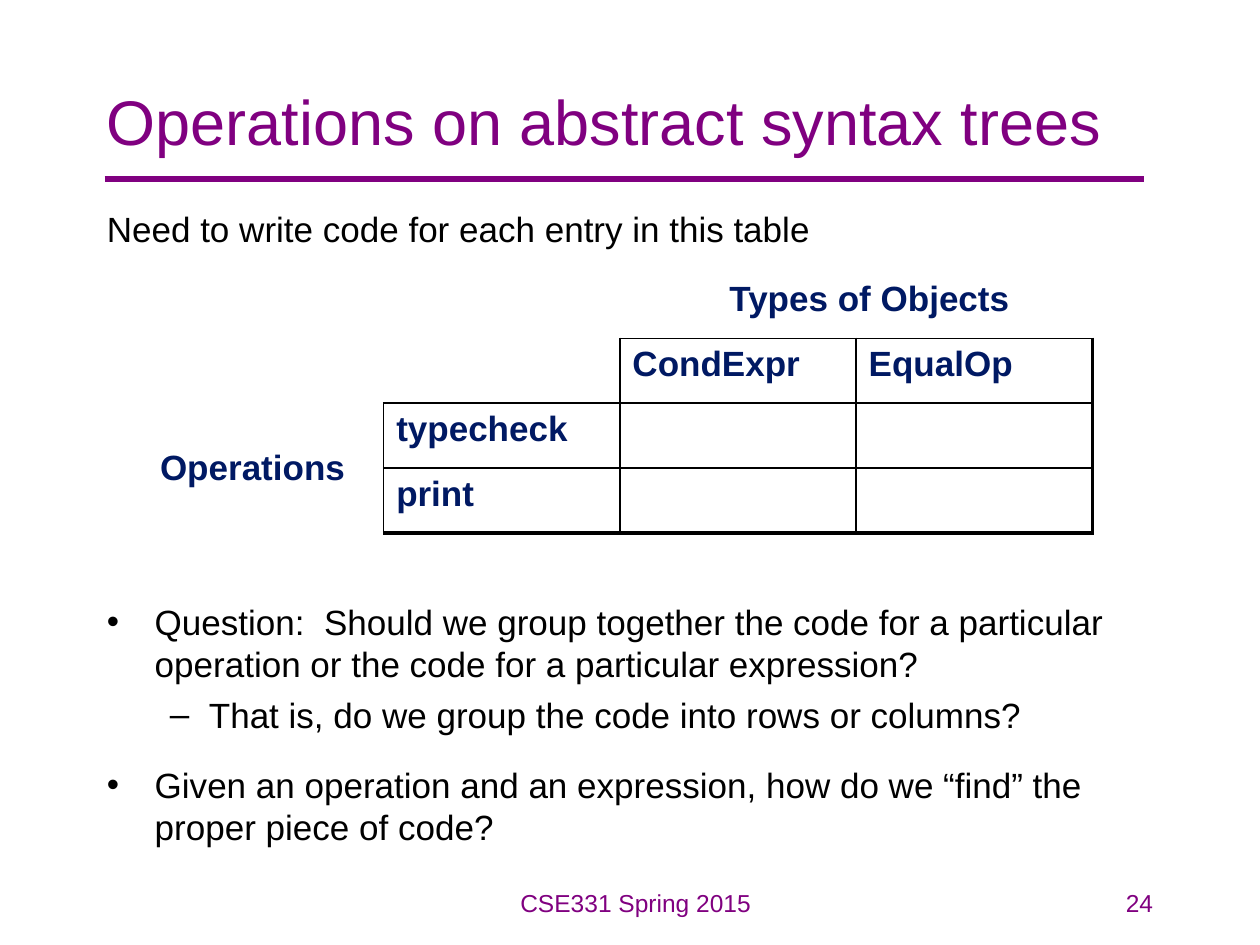
import pptx
import pptx.dml.color
import pptx.enum.shapes
import pptx.enum.text
import pptx.oxml
import pptx.oxml.ns
import pptx.util
from pptx.util import Inches

FONT = "Arial"
PURPLE, NAVY, BLACK = "800080", "001963", "000000"
ALIGN = pptx.enum.text.PP_ALIGN
ANCHOR = pptx.enum.text.MSO_ANCHOR


def rgb(color):
    return pptx.dml.color.RGBColor.from_string(color)


def element(xml):
    return pptx.oxml.parse_xml(xml.replace(">", " %s>" % pptx.oxml.ns.nsdecls("a"), 1))


def format_paragraph(p, size, color, bold=False, align=ALIGN.LEFT):
    p.alignment = align
    for r in p.runs:
        r.font.name = FONT
        r.font.size = pptx.util.Pt(size)
        r.font.bold = bold
        r.font.color.rgb = rgb(color)


def add_text(s, box, text, size, color, align=ALIGN.LEFT, anchor=ANCHOR.TOP):
    tf = s.shapes.add_textbox(*map(Inches, box)).text_frame
    tf.word_wrap = True
    tf.vertical_anchor = anchor
    tf.text = text
    for p in tf.paragraphs:
        format_paragraph(p, size, color, align=align)
    return tf


def add_header(s, box, title):
    left, top, width, height = box
    # Rule below the title
    y = Inches(top + height - 0.16)
    rule = s.shapes.add_connector(pptx.enum.shapes.MSO_CONNECTOR.STRAIGHT,
                                  Inches(left + 0.08), y, Inches(left + width - 0.17), y)
    rule.line.color.rgb = rgb(PURPLE)
    rule.line.width = pptx.util.Pt(3)
    rule._element.spPr.append(element("<a:effectLst></a:effectLst>"))
    add_text(s, box, title, 36, PURPLE, anchor=ANCHOR.MIDDLE)


def add_bullets(s, box, items):
    """Each item is (level, space before in points, text)."""
    tf = add_text(s, box, "\n".join(text for _, _, text in items), 20, BLACK)
    styles = [("•", 0.38, 0.38), ("–", 0.81, 0.31)]
    for p, (level, before, _) in zip(tf.paragraphs, items):
        mark, indent, hang = styles[level]
        p.level = level
        p.space_before = pptx.util.Pt(before)
        pPr = p._p.get_or_add_pPr()
        pPr.set("marL", str(Inches(indent)))
        pPr.set("indent", str(-Inches(hang)))
        pPr.append(element('<a:buFont typeface="%s"></a:buFont>' % FONT))
        pPr.append(element('<a:buChar char="%s"></a:buChar>' % mark))


def set_borders(cell, widths):
    """Widths in points for left, right, top, bottom; 0 means no line."""
    tcPr = cell._tc.get_or_add_tcPr()
    for i, (side, width) in enumerate(zip("LRTB", widths)):
        fill = '<a:solidFill><a:srgbClr val="%s"/></a:solidFill>' % BLACK if width else "<a:noFill/>"
        tcPr.insert(i, element('<a:ln%s w="%d">%s</a:ln%s>' % (side, pptx.util.Pt(width), fill, side)))


def add_operations_table(s, box):
    n = 4
    left, top, width, height = map(Inches, box)
    table = s.shapes.add_table(n, n, left, top, width, height).table
    table.first_row = table.horz_banding = False
    labels = {(0, 2): "Types of Objects", (1, 2): "CondExpr", (1, 3): "EqualOp",
              (2, 0): "Operations", (2, 1): "typecheck", (3, 1): "print"}

    def boxed(row, col):
        return 1 <= row < n and 1 <= col < n and (row, col) != (1, 1)

    for row in range(n):
        for col in range(n):
            cell = table.cell(row, col)
            cell.fill.background()
            cell.text = labels.get((row, col), "")
            format_paragraph(cell.text_frame.paragraphs[0], 20, NAVY, bold=True)
            # A line is drawn wherever either neighbour is boxed
            widths = []
            for dr, dc in ((0, -1), (0, 1), (-1, 0), (1, 0)):
                outer = row + dr == n or col + dc == n
                line = boxed(row, col) or boxed(row + dr, col + dc)
                widths.append((2.25 if outer else 1) if line else 0)
            set_borders(cell, widths)

    # Headings that span two cells
    table.cell(0, 2).merge(table.cell(0, 3))
    table.cell(0, 2).margin_left = Inches(0.87)
    table.cell(2, 0).merge(table.cell(3, 0))
    table.cell(2, 0).vertical_anchor = ANCHOR.MIDDLE


def add_footer(s, box, course, number):
    left, top, width, height = box
    add_text(s, (left + 2.42, top, 3.75, height), course, 14, PURPLE, ALIGN.CENTER)
    add_text(s, (left + width - 2.08, top, 2.08, height), number, 14, PURPLE, ALIGN.RIGHT)


def main():
    prs = pptx.Presentation()
    prs.slide_width, prs.slide_height = Inches(10), Inches(7.5)
    s = prs.slides.add_slide(prs.slide_layouts[6])

    add_header(s, (0.75, 0.33, 8.5, 1.25), "Operations on abstract syntax trees")
    add_text(s, (0.75, 1.6, 8.5, 0.45), "Need to write code for each entry in this table", 20, BLACK)
    add_operations_table(s, (1.17, 2.17, 7.5, 2.06))
    add_bullets(s, (0.75, 4.72, 8.5, 2.15), [
        (0, 0, "Question:  Should we group together the code for a particular "
               "operation or the code for a particular expression?"),
        (1, 5, "That is, do we group the code into rows or columns?"),
        (0, 16, "Given an operation and an expression, how do we “find” the proper piece of code?"),
    ])
    add_footer(s, (0.75, 7, 8.5, 0.5), "CSE331 Spring 2015", "24")
    prs.save("out.pptx")


if __name__ == "__main__":
    main()
